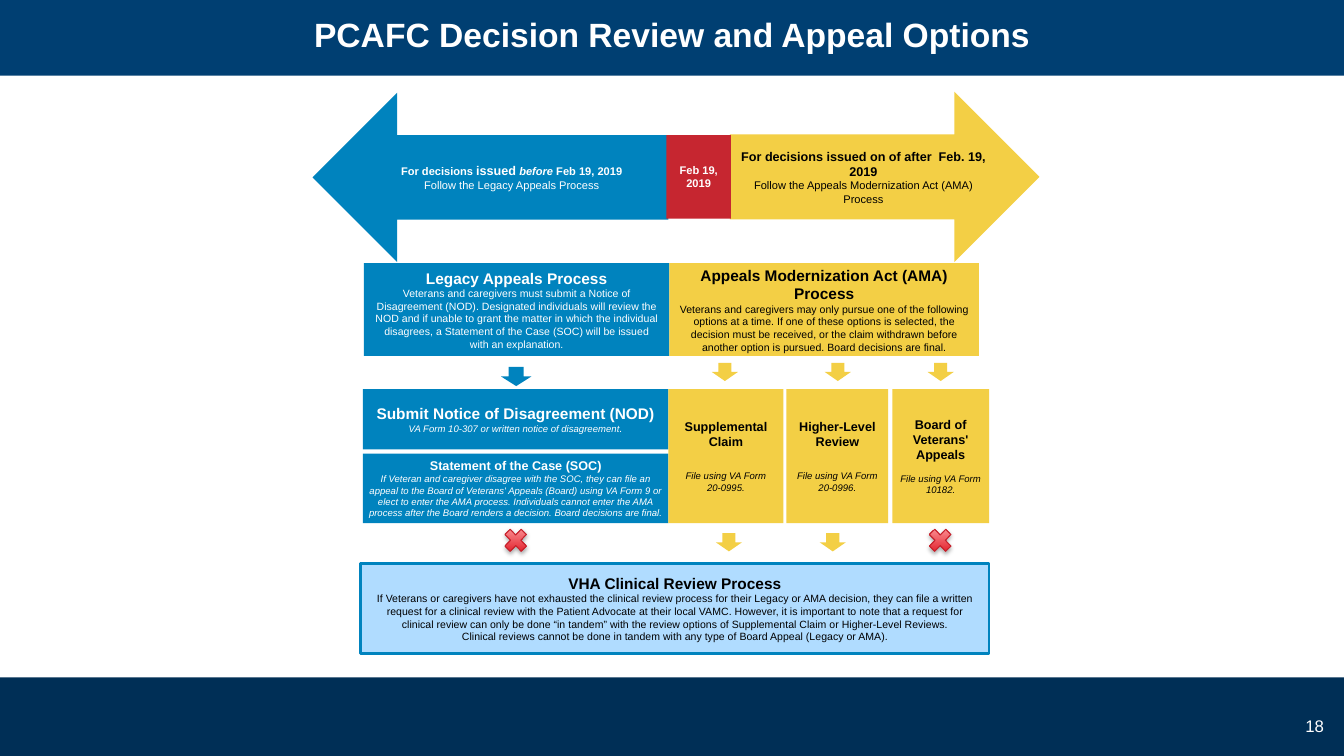
from dataclasses import dataclass

from lxml import etree
from pptx import Presentation
from pptx.dml.color import RGBColor
from pptx.enum.shapes import MSO_SHAPE
from pptx.enum.text import MSO_ANCHOR, MSO_AUTO_SIZE, PP_ALIGN
from pptx.oxml.ns import qn
from pptx.shapes.autoshape import Shape
from pptx.slide import Slide
from pptx.text.text import TextFrame
from pptx.util import Inches, Pt

RECT = MSO_SHAPE.RECTANGLE
LEFT_ARROW = MSO_SHAPE.LEFT_ARROW
RIGHT_ARROW = MSO_SHAPE.RIGHT_ARROW
DOWN_ARROW = MSO_SHAPE.DOWN_ARROW
CROSS = MSO_SHAPE.MATH_MULTIPLY
MIDDLE = MSO_ANCHOR.MIDDLE
CENTER, RIGHT = PP_ALIGN.CENTER, PP_ALIGN.RIGHT
NO_AUTOFIT = MSO_AUTO_SIZE.NONE

FONT = "Arial"
NAVY = RGBColor(0x00, 0x2F, 0x56)
TITLE_BLUE = RGBColor(0x00, 0x3F, 0x72)
BLUE = RGBColor(0x00, 0x83, 0xBE)
PALE_BLUE = RGBColor(0xB0, 0xDC, 0xFF)
YELLOW = RGBColor(0xF3, 0xCF, 0x45)
RED = RGBColor(0xC6, 0x26, 0x30)
CROSS_EDGE = RGBColor(0xC6, 0x21, 0x2C)
CROSS_DARK = RGBColor(0xDE, 0x0E, 0x1B)
CROSS_LIGHT = RGBColor(0xFF, 0xA3, 0xA5)
WHITE = RGBColor(0xFF, 0xFF, 0xFF)
BLACK = RGBColor(0x00, 0x00, 0x00)

WIDE_INSETS, NARROW_INSETS = (0.1, 0.05), (0.06, 0.03)
HEADING, SUBHEADING, LABEL, BODY, NOTE = 11, 9, 7.9, 7.5, 6.8
OPTION_GAP = 15

SLIDE_WIDTH = 13.33
STAGE_TOP, PROCESS_TOP = 3.86, 2.61
OPTION_HEIGHT = 1.33


@dataclass
class Span:
    text: str
    size: float
    bold: bool = False
    italic: bool = False


@dataclass
class Line:
    spans: list[Span]
    space_before: float = 0


@dataclass
class Box:
    left: float
    top: float
    width: float
    height: float
    fill: RGBColor
    color: RGBColor
    lines: list[Line]
    insets: tuple[float, float] = WIDE_INSETS
    kind: MSO_SHAPE = RECT


def heading(text: str, size: float = HEADING) -> Line:
    return Line([Span(text, size, bold=True)])


def body(text: str, size: float = BODY) -> Line:
    return Line([Span(text, size)])


def note(text: str, space_before: float = 0) -> Line:
    return Line([Span(text, NOTE, italic=True)], space_before)


def write_lines(frame: TextFrame, lines: list[Line], color: RGBColor,
                insets: tuple[float, float] = WIDE_INSETS, align: PP_ALIGN = CENTER) -> None:
    frame.word_wrap = True
    frame.auto_size = NO_AUTOFIT
    frame.vertical_anchor = MIDDLE
    frame.margin_left = frame.margin_right = Inches(insets[0])
    frame.margin_top = frame.margin_bottom = Inches(insets[1])
    for index, line in enumerate(lines):
        paragraph = frame.add_paragraph() if index else frame.paragraphs[0]
        paragraph.alignment = align
        if line.space_before:
            paragraph.space_before = Pt(line.space_before)
        for span in line.spans:
            run = paragraph.add_run()
            run.text = span.text
            run.font.name = FONT
            run.font.size = Pt(span.size)
            run.font.bold = span.bold
            run.font.italic = span.italic
            run.font.color.rgb = color


def add_flat(slide: Slide, kind: MSO_SHAPE, left: float, top: float,
             width: float, height: float, fill: RGBColor) -> Shape:
    """Add a shape with a plain fill, no line and no shadow."""
    shape = slide.shapes.add_shape(kind, Inches(left), Inches(top), Inches(width), Inches(height))
    shape.shadow.inherit = False
    shape.fill.solid()
    shape.fill.fore_color.rgb = fill
    shape.line.fill.background()
    return shape


def add_box(slide: Slide, box: Box) -> Shape:
    shape = add_flat(slide, box.kind, box.left, box.top, box.width, box.height, box.fill)
    write_lines(shape.text_frame, box.lines, box.color, box.insets)
    return shape


def add_cross(slide: Slide, left: float) -> None:
    """Mark a path that does not lead to the clinical review."""
    cross = add_flat(slide, CROSS, left, 5.2, 0.31, 0.32, CROSS_DARK)
    cross.fill.gradient()
    cross.fill.gradient_angle = 90
    for stop, color in zip(cross.fill.gradient_stops, (CROSS_DARK, CROSS_LIGHT)):
        stop.color.rgb = color
    for stop, position in zip(cross.fill.gradient_stops, (0, 1)):
        stop.position = position
    cross.line.color.rgb = CROSS_EDGE
    cross.line.width = Pt(0.75)
    effects = cross.element.spPr.find(qn("a:effectLst"))
    shadow = etree.SubElement(effects, qn("a:outerShdw"), blurRad=str(Pt(3.1)),
                              dist=str(Pt(1.8)), dir="5400000", rotWithShape="0")
    shade = etree.SubElement(shadow, qn("a:srgbClr"), val="000000")
    etree.SubElement(shade, qn("a:alpha"), val="35000")


BOXES = [
    Box(3.1, 0.92, 3.53, 1.68, BLUE, WHITE, [
        Line([Span("For decisions ", LABEL, True), Span("issued", SUBHEADING, True),
              Span(" ", LABEL, True), Span("before ", LABEL, True, True),
              Span("Feb 19, 2019", LABEL, True)]),
        body("Follow the Legacy Appeals Process", LABEL)], kind=LEFT_ARROW),
    Box(7.24, 0.91, 3.07, 1.69, YELLOW, BLACK, [
        heading("For decisions issued on of after  Feb. 19, 2019", SUBHEADING),
        body("Follow the Appeals Modernization Act (AMA) Process", LABEL)],
        NARROW_INSETS, RIGHT_ARROW),
    Box(6.61, 1.34, 0.64, 0.83, RED, WHITE, [heading("Feb 19, 2019", LABEL)]),
    Box(3.61, PROCESS_TOP, 3.03, 0.92, BLUE, WHITE, [
        heading("Legacy Appeals Process"),
        body("Veterans and caregivers must submit a Notice of Disagreement (NOD). Designated "
             "individuals will review the NOD and if unable to grant the matter in which the "
             "individual disagrees, a Statement of the Case (SOC) will be issued with an "
             "explanation.")]),
    Box(6.64, PROCESS_TOP, 3.07, 0.92, YELLOW, BLACK, [
        heading("Appeals Modernization Act (AMA) Process"),
        body("Veterans and caregivers may only pursue one of the following options at a time. "
             "If one of these options is selected, the decision must be received, or the claim "
             "withdrawn before another option is pursued. Board decisions are final.")],
        NARROW_INSETS),
    Box(3.6, STAGE_TOP, 3.03, 0.6, BLUE, WHITE, [
        heading("Submit Notice of Disagreement (NOD)"),
        Line([Span("VA Form 10-307 or written notice of disagreement", NOTE, italic=True),
              Span(".", BODY, italic=True)])], NARROW_INSETS),
    Box(3.6, 4.5, 3.03, 0.69, BLUE, WHITE, [
        heading("Statement of the Case (SOC)", SUBHEADING),
        note("If Veteran and caregiver disagree with the SOC, they can file an appeal to the "
             "Board of Veterans' Appeals (Board) using VA Form 9 or elect to enter the AMA "
             "process. Individuals cannot enter the AMA process after the Board renders a "
             "decision. Board decisions are final.")], NARROW_INSETS),
    Box(6.63, STAGE_TOP, 1.14, OPTION_HEIGHT, YELLOW, BLACK, [
        heading("Supplemental Claim", SUBHEADING),
        note("File using VA Form 20-0995.", OPTION_GAP)]),
    Box(7.8, STAGE_TOP, 1.01, OPTION_HEIGHT, YELLOW, BLACK, [
        heading("Higher-Level", SUBHEADING), heading("Review", SUBHEADING),
        note("File using VA Form 20-0996.", OPTION_GAP)], NARROW_INSETS),
    Box(8.85, STAGE_TOP, 0.96, OPTION_HEIGHT, YELLOW, BLACK, [
        heading("Board of Veterans' Appeals", SUBHEADING),
        note("File using VA Form 10182.", OPTION_GAP / 2)], NARROW_INSETS),
]
CLINICAL_REVIEW = Box(3.58, 5.59, 6.23, 0.89, PALE_BLUE, BLACK, [
    heading("VHA Clinical Review Process"),
    body("If Veterans or caregivers have not exhausted the clinical review process for their "
         "Legacy or AMA decision, they can file a written request for a clinical review with "
         "the Patient Advocate at their local VAMC. However, it is important to note that a "
         "request for clinical review can only be done “in tandem” with the review options of "
         "Supplemental Claim or Higher-Level Reviews."),
    body("Clinical reviews cannot be done in tandem with any type of Board Appeal "
         "(Legacy or AMA).")])
OPTION_ARROWS = [(7.06, 3.6), (8.18, 3.6), (9.2, 3.6), (7.1, 5.29), (8.13, 5.29)]


def main() -> None:
    deck = Presentation()
    deck.slide_width, deck.slide_height = Inches(SLIDE_WIDTH), Inches(7.5)
    slide = deck.slides.add_slide(deck.slide_layouts[5])

    title = slide.shapes.title
    title.left, title.top = Inches(0), Inches(-0.08)
    title.width, title.height = Inches(SLIDE_WIDTH), Inches(0.83)
    title.fill.solid()
    title.fill.fore_color.rgb = TITLE_BLUE
    write_lines(title.text_frame, [heading("PCAFC Decision Review and Appeal Options", 24)], WHITE)

    add_flat(slide, RECT, 0, 6.72, SLIDE_WIDTH, 0.78, NAVY)
    page_number = slide.shapes.add_textbox(Inches(10.12), Inches(7), Inches(3.11), Inches(0.4))
    write_lines(page_number.text_frame, [body("18", 12)], WHITE, align=RIGHT)

    for box in BOXES:
        add_box(slide, box)
    clinical_review = add_box(slide, CLINICAL_REVIEW)
    clinical_review.line.color.rgb = BLUE
    clinical_review.line.width = Pt(2)

    add_flat(slide, DOWN_ARROW, 4.97, 3.64, 0.3, 0.19, BLUE)
    for left, top in OPTION_ARROWS:
        add_flat(slide, DOWN_ARROW, left, top, 0.26, 0.18, YELLOW)
    for left in (4.96, 9.17):
        add_cross(slide, left)

    deck.save("out.pptx")


if __name__ == "__main__":
    main()
